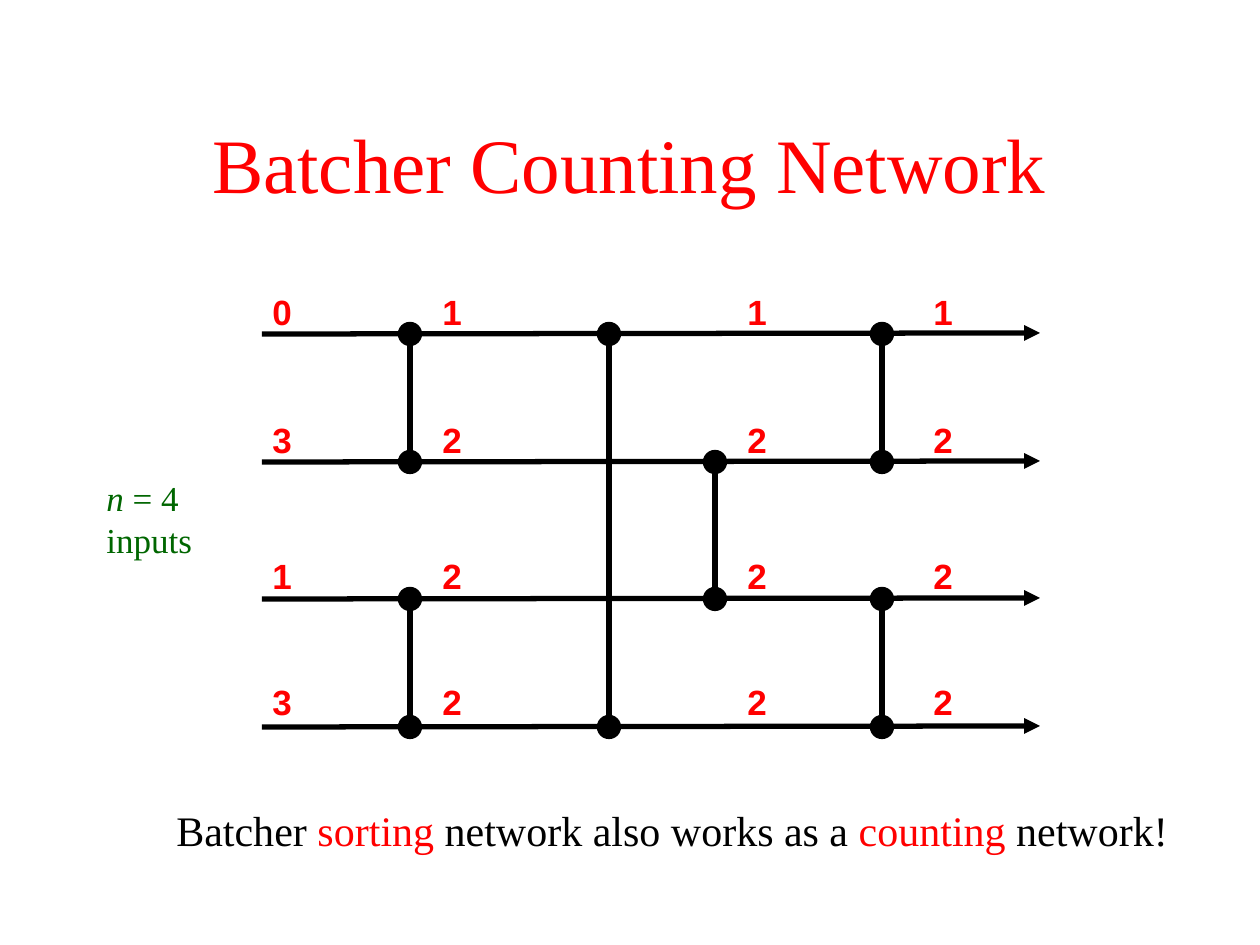
from lxml import etree
from pptx import Presentation
from pptx.dml.color import RGBColor
from pptx.enum.shapes import MSO_CONNECTOR, MSO_SHAPE
from pptx.enum.text import MSO_ANCHOR, MSO_AUTO_SIZE, PP_ALIGN
from pptx.oxml.ns import qn
from pptx.util import Pt

STRAIGHT = MSO_CONNECTOR.STRAIGHT
ELLIPSE = MSO_SHAPE.OVAL
MIDDLE = MSO_ANCHOR.MIDDLE
GROW = MSO_AUTO_SIZE.SHAPE_TO_FIT_TEXT
LEFT, CENTER = PP_ALIGN.LEFT, PP_ALIGN.CENTER

EMU_PER_PX = 914400 / 126
RED, GREEN, BLACK = "FF0000", "006600", "000000"
SERIF, SANS = "Times New Roman", "Arial"

WIRE_YS = [334, 462, 599, 727]
WIRE_START, WIRE_END = 262, 1040
BALANCERS = [(410, 0, 1), (410, 2, 3), (609, 0, 3),
             (715, 1, 2), (882, 0, 1), (882, 2, 3)]
TOKEN_YS = [284, 412, 548, 674]
TOKEN_STAGES = {260: "0313", 430: "1222", 735: "1222", 921: "1222"}


def px(length):
    return round(length * EMU_PER_PX)


def rgb(value):
    return RGBColor.from_string(value)


def add_run(paragraph, text, size=20, font=SERIF, color=BLACK, bold=False, italic=False):
    run = paragraph.add_run()
    run.text = text
    run.font.size = Pt(size)
    run.font.name = font
    run.font.color.rgb = rgb(color)
    run.font.bold = bold
    run.font.italic = italic


class Diagram:
    def __init__(self, slide, color=BLACK, wire_width=3, dot_size=23):
        self.shapes = slide.shapes
        self.color = color
        self.wire_width = wire_width
        self.dot_size = dot_size

    def line(self, x1, y1, x2, y2, arrow=False):
        connector = self.shapes.add_connector(STRAIGHT, px(x1), px(y1), px(x2), px(y2))
        connector.line.color.rgb = rgb(self.color)
        connector.line.width = Pt(self.wire_width)
        if arrow:
            etree.SubElement(connector.line._get_or_add_ln(), qn("a:tailEnd"), type="triangle")
        etree.SubElement(connector._element.spPr, qn("a:effectLst"))

    def dot(self, x, y):
        radius = self.dot_size / 2
        dot = self.shapes.add_shape(ELLIPSE, px(x - radius), px(y - radius),
                                    px(self.dot_size), px(self.dot_size))
        dot.shadow.inherit = False
        dot.fill.solid()
        dot.fill.fore_color.rgb = rgb(self.color)
        dot.line.color.rgb = rgb(self.color)
        dot.line.width = Pt(0.75)

    def text(self, x, y, width, height, paragraphs, wrap=False, align=LEFT, shapes=None):
        box = (shapes or self.shapes).add_textbox(px(x), px(y), px(width), px(height))
        frame = box.text_frame
        frame.word_wrap = wrap
        if wrap:
            frame.vertical_anchor = MIDDLE
        else:
            frame.auto_size = GROW
        for index, runs in enumerate(paragraphs):
            paragraph = frame.add_paragraph() if index else frame.paragraphs[0]
            paragraph.alignment = align
            for text, style in runs:
                add_run(paragraph, text, **style)

    def tokens(self, x, counts):
        stage = self.shapes.add_group_shape()
        style = dict(font=SANS, color=RED, bold=True)
        for y, count in zip(TOKEN_YS, counts):
            self.text(x, y, 45, 54, [[(count, style)]], shapes=stage.shapes)


def main():
    presentation = Presentation()
    presentation.slide_width, presentation.slide_height = px(1260), px(945)
    diagram = Diagram(presentation.slides.add_slide(presentation.slide_layouts[6]))

    diagram.text(94, 84, 1071, 158,
                 [[("Batcher Counting Network", dict(size=44, color=RED))]],
                 wrap=True, align=CENTER)
    diagram.text(94, 470, 111, 97, [
        [("n ", dict(color=GREEN, italic=True)), ("= 4", dict(color=GREEN))],
        [("inputs", dict(color=GREEN))],
    ])
    plain, accent = dict(size=24), dict(size=24, color=RED)
    diagram.text(164, 798, 1017, 63, [[
        ("Batcher ", plain), ("sorting ", accent), ("network also works as a ", plain),
        ("counting", accent), (" network!", plain),
    ]])

    for y in WIRE_YS:
        diagram.line(WIRE_START, y, WIRE_END, y - 1, arrow=True)
    for x, upper, lower in BALANCERS:
        diagram.line(x, WIRE_YS[upper], x, WIRE_YS[lower])
        for wire in (upper, lower):
            diagram.dot(x, WIRE_YS[wire])
    for x, counts in TOKEN_STAGES.items():
        diagram.tokens(x, counts)

    presentation.save("out.pptx")


if __name__ == "__main__":
    main()
